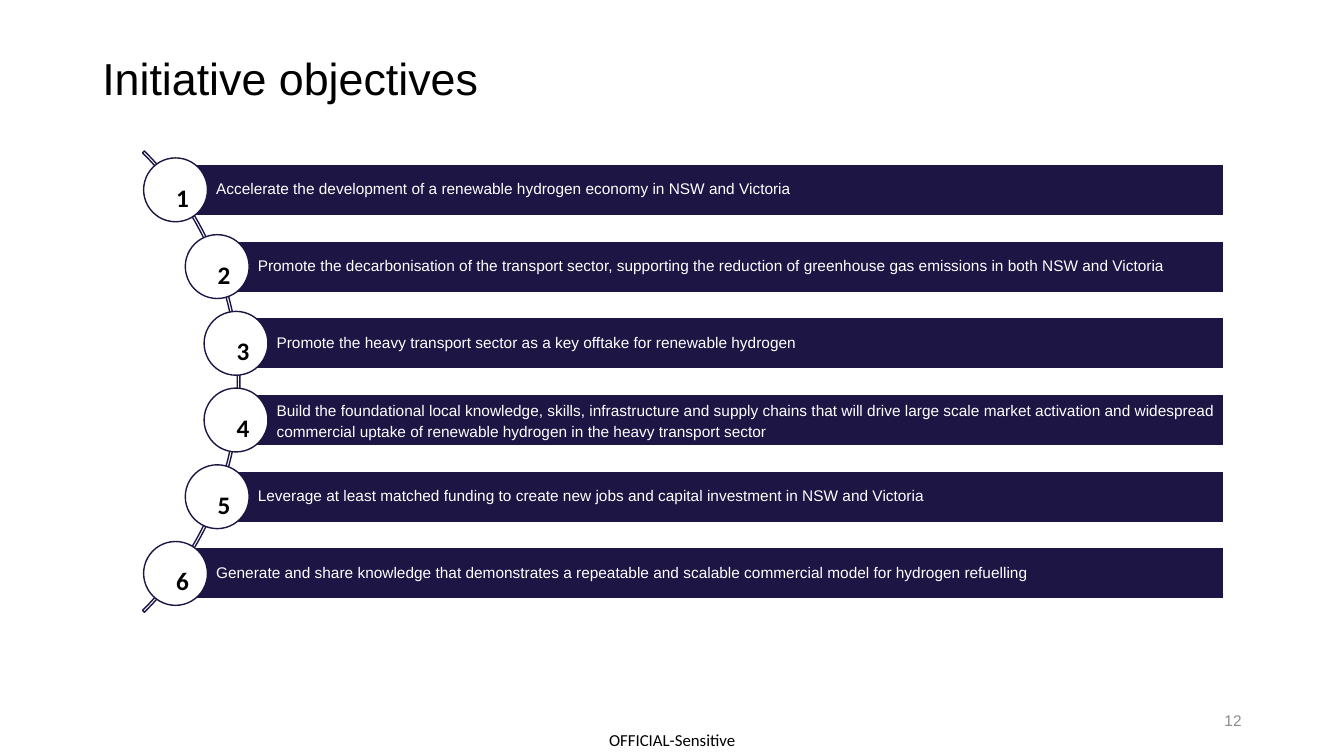
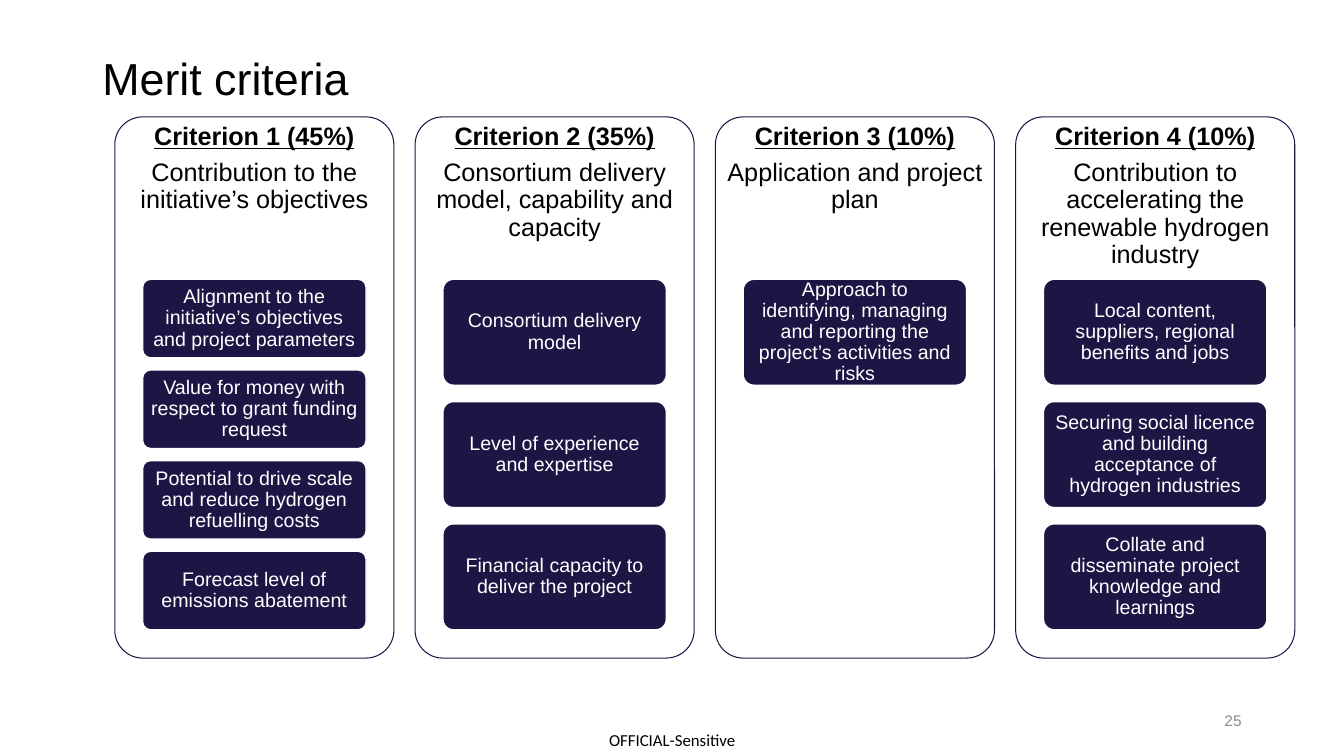
from math import sqrt

from pptx import Presentation
from pptx.dml.color import RGBColor
from pptx.enum.shapes import MSO_SHAPE
from pptx.enum.text import MSO_ANCHOR, PP_ALIGN
from pptx.util import Pt

NAVY, WHITE, BLACK, GREY = "1D1645", "FFFFFF", "000000", "8C8C8C"
DEFAULT_INSETS = (7.2, 3.6, 7.2, 3.6)

OBJECTIVES = [
    "Accelerate the development of a renewable hydrogen economy in NSW and Victoria",
    "Promote the decarbonisation of the transport sector, supporting the reduction of "
    "greenhouse gas emissions in both NSW and Victoria",
    "Promote the heavy transport sector as a key offtake for renewable hydrogen",
    "Build the foundational local knowledge, skills, infrastructure and supply chains that will "
    "drive large scale market activation and widespread commercial uptake of renewable hydrogen "
    "in the heavy transport sector",
    "Leverage at least matched funding to create new jobs and capital investment in NSW and Victoria",
    "Generate and share knowledge that demonstrates a repeatable and scalable commercial model "
    "for hydrogen refuelling",
]

CRITERIA = [
    ("Criterion 1 (45%)", "Contribution to the initiative’s objectives", 4, [
        "Alignment to the initiative’s objectives and project parameters",
        "Value for money with respect to grant funding request",
        "Potential to drive scale and reduce hydrogen refuelling costs",
        "Forecast level of emissions abatement",
    ]),
    ("Criterion 2 (35%)", "Consortium delivery model, capability and capacity", 3, [
        "Consortium delivery model",
        "Level of experience and expertise",
        "Financial capacity to deliver the project",
    ]),
    ("Criterion 3 (10%)", "Application and project plan", 3, [
        "Approach to identifying, managing and reporting the project’s activities and risks",
    ]),
    ("Criterion 4 (10%)", "Contribution to accelerating the renewable hydrogen industry", 3, [
        "Local content, suppliers, regional benefits and jobs",
        "Securing social licence and building acceptance of hydrogen industries",
        "Collate and disseminate project knowledge and learnings",
    ]),
]


def rgb(value):
    return RGBColor.from_string(value)


def write(p, text, size=14, color=BLACK, font="Arial", bold=False, underline=False,
          align=PP_ALIGN.LEFT, spacing=1.0, after=0):
    p.alignment = align
    p.line_spacing = spacing
    p.space_after = Pt(after)
    r = p.add_run()
    r.text = text
    r.font.name = font
    r.font.size = Pt(size)
    r.font.bold = bold
    r.font.underline = underline
    r.font.color.rgb = rgb(color)


class Deck:
    def __init__(self):
        self.prs = Presentation()
        self.prs.slide_width = Pt(960)
        self.prs.slide_height = Pt(540)
        self.s = None

    def slide(self, title, number):
        self.s = self.prs.slides.add_slide(self.prs.slide_layouts[6])
        self.text(421.9, 517, 116.6, 23, "OFFICIAL-Sensitive", insets=(0, 0, 0, 0),
                  size=12, font="Calibri", align=PP_ALIGN.CENTER)
        self.text(66, 28.8, 828, 58, title, size=32, spacing=0.9)
        self.text(678, 500.5, 216, 28.8, number, size=11, color=GREY, align=PP_ALIGN.RIGHT)

    def frame(self, sp, insets, anchor):
        tf = sp.text_frame
        tf.word_wrap = True
        tf.vertical_anchor = anchor
        tf.margin_left, tf.margin_top, tf.margin_right, tf.margin_bottom = map(Pt, insets)
        return tf

    def text(self, x, y, w, h, text, insets=DEFAULT_INSETS, anchor=MSO_ANCHOR.MIDDLE, **fmt):
        sp = self.s.shapes.add_textbox(Pt(x), Pt(y), Pt(w), Pt(h))
        tf = self.frame(sp, insets, anchor)
        write(tf.paragraphs[0], text, **fmt)
        return tf

    def shape(self, kind, x, y, w, h, fill=None, line=NAVY, width=1, adjust=()):
        sp = self.s.shapes.add_shape(kind, Pt(x), Pt(y), Pt(w), Pt(h))
        sp.shadow.inherit = False
        for i, value in enumerate(adjust):
            sp.adjustments[i] = value
        if fill:
            sp.fill.solid()
            sp.fill.fore_color.rgb = rgb(fill)
        else:
            sp.fill.background()
        sp.line.color.rgb = rgb(line)
        sp.line.width = Pt(width)
        return sp

    def bar(self, x, y, w, h, text, spacing):
        sp = self.shape(MSO_SHAPE.RECTANGLE, x, y, w, h, NAVY, WHITE)
        tf = self.frame(sp, (29, 2.2, 2.2, 2.2), MSO_ANCHOR.MIDDLE)
        write(tf.paragraphs[0], text, size=11, color=WHITE, spacing=spacing)

    def badge(self, cx, cy, size, number):
        self.shape(MSO_SHAPE.OVAL, cx - size / 2, cy - size / 2, size, size, WHITE)
        self.text(cx - 9.8, cy - 9, 29.6, 29.6, str(number), anchor=MSO_ANCHOR.TOP,
                  size=18, font="Calibri", bold=True, align=PP_ALIGN.CENTER)

    def panel(self, x, y, w, h, heading, summary):
        self.shape(MSO_SHAPE.ROUNDED_RECTANGLE, x, y, w, h, width=0.75, adjust=[0.1])
        fmt = dict(size=18, align=PP_ALIGN.CENTER, spacing=0.9, after=6.3)
        tf = self.text(x, y, w, 116, heading, insets=(5, 5, 5, 5), anchor=MSO_ANCHOR.TOP,
                       bold=True, underline=True, **fmt)
        write(tf.add_paragraph(), summary, **fmt)

    def card(self, x, y, w, h, text):
        sp = self.shape(MSO_SHAPE.ROUNDED_RECTANGLE, x, y, w, h, NAVY, WHITE, adjust=[0.1])
        side = 0.06 * h
        tf = self.frame(sp, (side, 2, side, 2), MSO_ANCHOR.MIDDLE)
        write(tf.paragraphs[0], text, color=WHITE, align=PP_ALIGN.CENTER, spacing=0.9)


def objectives_slide(deck):
    deck.slide("Initiative objectives", "12")
    arc_x, arc_y, arc_size = -61.6, 272.6, 466
    deck.shape(MSO_SHAPE.BLOCK_ARC, arc_x - arc_size / 2, arc_y - arc_size / 2,
               arc_size, arc_size, adjust=[189, 27, 0.004])
    radius, step, bar_h, right = 231.8, 54.8, 36.7, 874.4
    for i, text in enumerate(OBJECTIVES):
        dy = (i - (len(OBJECTIVES) - 1) / 2) * step
        cx = arc_x + sqrt(radius ** 2 - dy ** 2)
        cy = arc_y + dy
        deck.bar(cx, cy - bar_h / 2, right - cx, bar_h, text, 1.1 if i == 3 else 0.9)
        deck.badge(cx, cy, 45.6, i + 1)


def criteria_slide(deck):
    deck.slide("Merit criteria", "25")
    panel_w, card_w, cards_top, cards_h, gap = 199.4, 159.6, 199.5, 250.4, 0.154
    for i, (heading, summary, slots, cards) in enumerate(CRITERIA):
        x = 82 + i * 214.5
        deck.panel(x, 83.5, panel_w, 386.6, heading, summary)
        card_h = cards_h / (slots + gap * (slots - 1))
        for j, text in enumerate(cards):
            deck.card(x + (panel_w - card_w) / 2, cards_top + j * card_h * (1 + gap),
                      card_w, card_h, text)


def main():
    deck = Deck()
    objectives_slide(deck)
    criteria_slide(deck)
    deck.prs.save("out.pptx")


if __name__ == "__main__":
    main()
